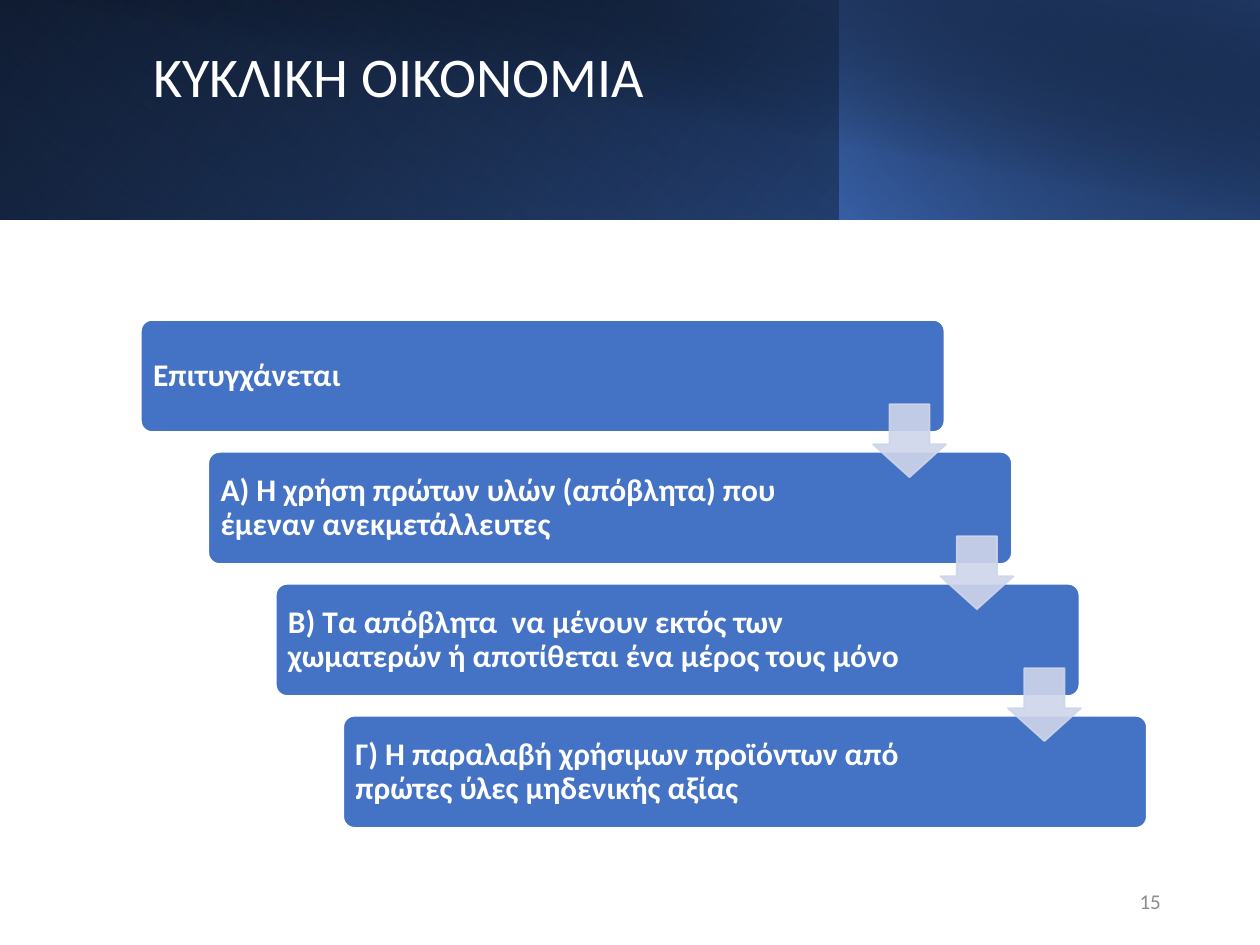
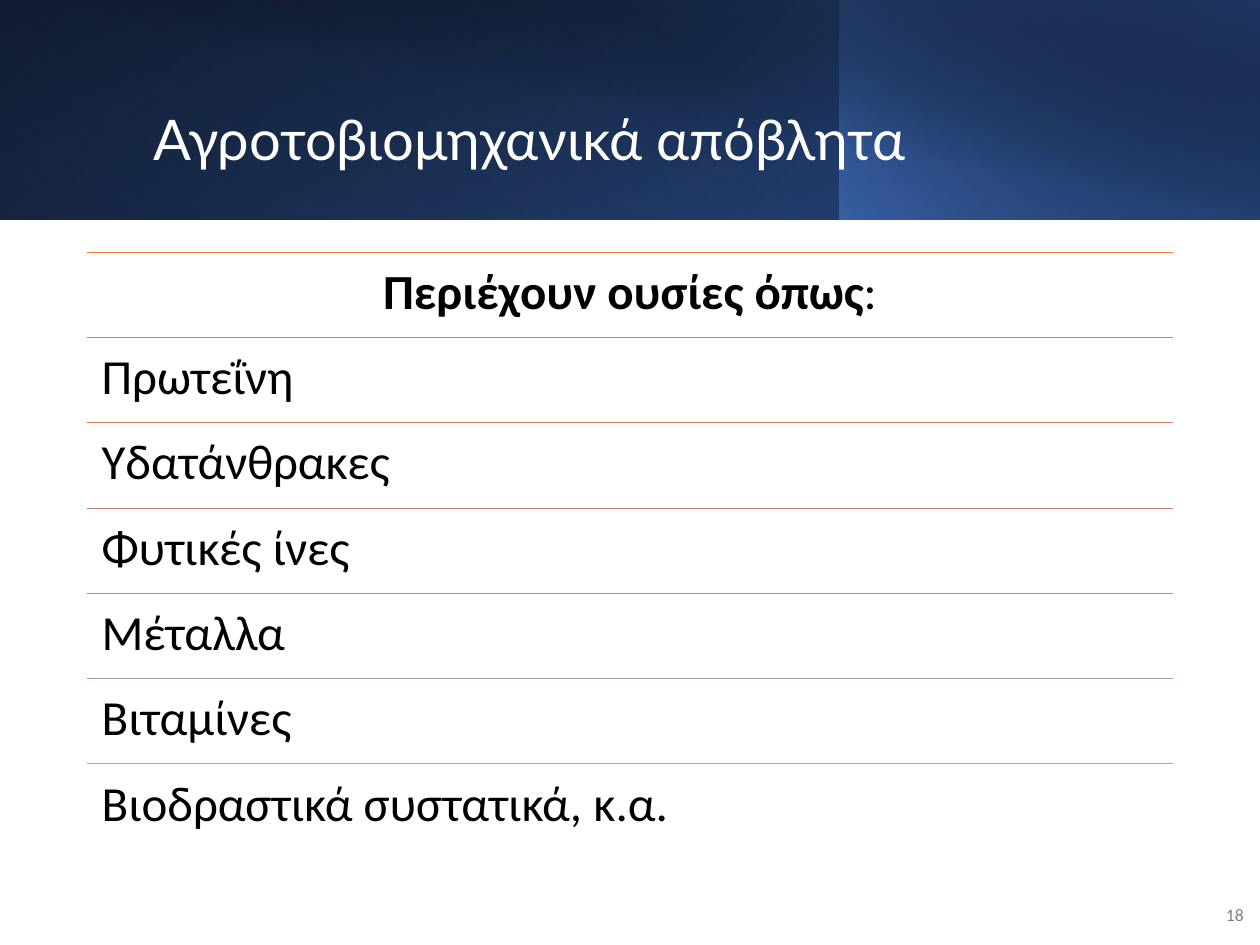
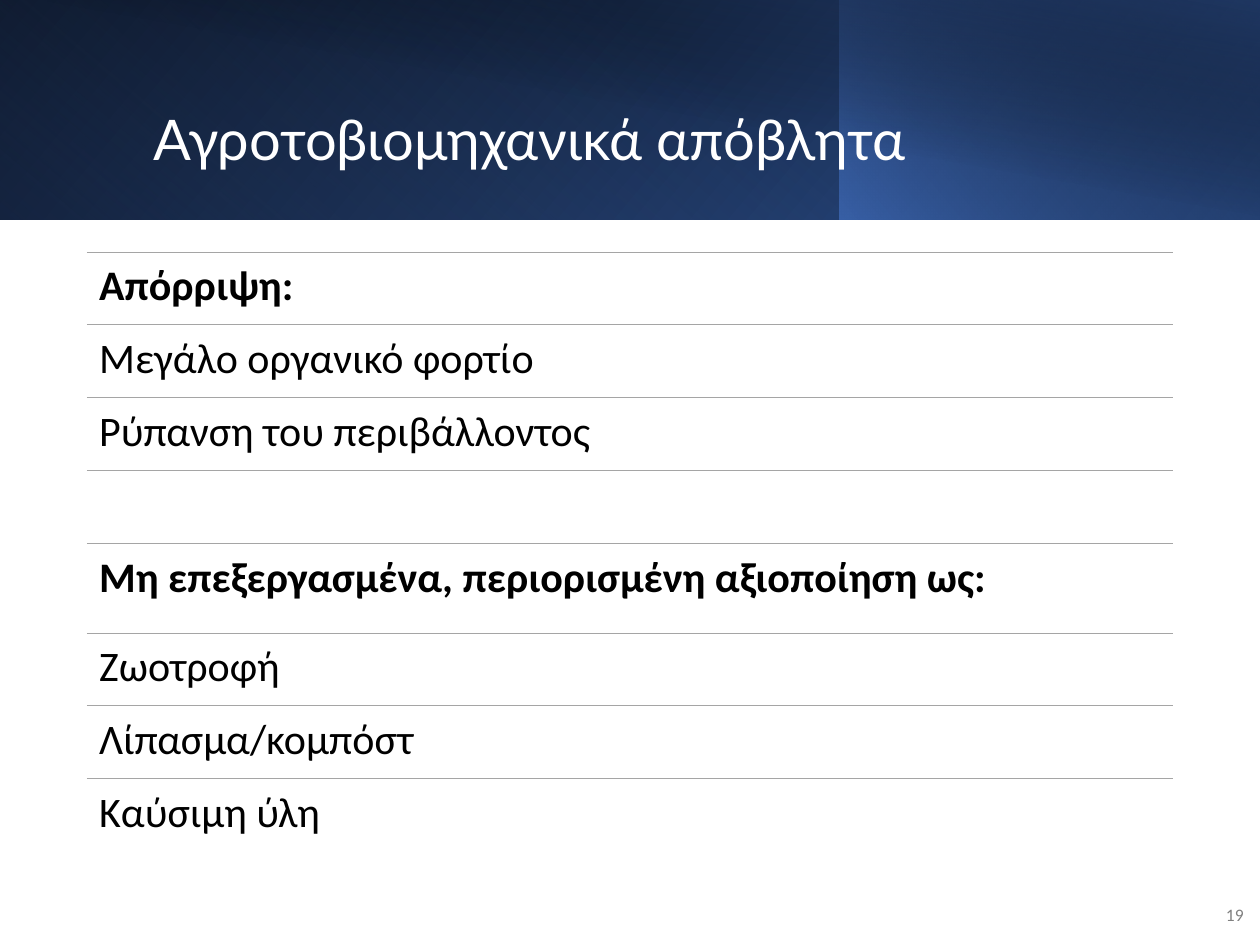
from dataclasses import dataclass

from lxml import etree
from pptx import Presentation
from pptx.dml.color import RGBColor
from pptx.enum import shapes, text
from pptx.oxml import ns
from pptx.util import Cm, Pt

WHITE, BLACK = "FFFFFF", "000000"
BLUE, NAVY, PALE, GREY = "4472C4", "203864", "CFD5EA", "A5A5A5"
BODY_FONT, HEADING_FONT = "Calibri", "Lato"
LEFT, CENTER, RIGHT = text.PP_ALIGN.LEFT, text.PP_ALIGN.CENTER, text.PP_ALIGN.RIGHT
TOP, MIDDLE, BOTTOM = text.MSO_ANCHOR.TOP, text.MSO_ANCHOR.MIDDLE, text.MSO_ANCHOR.BOTTOM


@dataclass(frozen=True)
class Box:
    """Left, top, width and height in centimetres."""
    left: float
    top: float
    width: float
    height: float

    def lengths(self) -> tuple:
        return Cm(self.left), Cm(self.top), Cm(self.width), Cm(self.height)

    def shifted(self, dx: float, dy: float) -> "Box":
        return Box(self.left + dx, self.top + dy, self.width, self.height)


@dataclass(frozen=True)
class Stop:
    position: int
    color: str
    opacity: int = 100


@dataclass(frozen=True)
class BandLayer:
    box: Box
    angle: int
    stops: tuple[Stop, ...]
    flipped: bool = True
    rotation: int = 0


@dataclass(frozen=True)
class Row:
    words: str
    rule_color: str = GREY
    height: float = 1.47
    bold: bool = False
    tail: str = ""
    align: text.PP_ALIGN = LEFT


BAND = (
    BandLayer(Box(0, 0, 25.4, 4.42), 140, (Stop(0, BLACK), Stop(100, "2F5597"))),
    BandLayer(Box(0, 0, 16.92, 4.42), 230, (Stop(20, BLUE, 0), Stop(100, NAVY, 55)),
              rotation=180),
    BandLayer(Box(16.92, 0, 8.48, 4.42), 220, (Stop(0, BLUE, 66), Stop(100, BLACK, 30))),
    BandLayer(Box(0.97, 0, 24.43, 4.44), 280, (Stop(50, BLACK, 0), Stop(99, NAVY, 52)),
              flipped=False),
)
TITLE = Box(2.84, 0.81, 20.62, 2.87)
CORNER_NUMBER = Box(24.38, 17.93, 0.94, 1.02)

STEPS = (
    "Επιτυγχάνεται",
    "Α) Η χρήση πρώτων υλών (απόβλητα) που έμεναν ανεκμετάλλευτες",
    "Β) Τα απόβλητα  να μένουν εκτός των χωματερών ή αποτίθεται ένα μέρος τους μόνο",
    "Γ) Η παραλαβή χρήσιμων προϊόντων από πρώτες ύλες μηδενικής αξίας",
)
FIRST_STEP = Box(2.84, 6.45, 16.2, 2.26)
FIRST_ARROW = Box(17.6, 8.15, 1.47, 1.47)
STEP_RIGHT, STEP_DOWN = 1.36, 2.66

SUBSTANCES = (
    Row("Περιέχουν ουσίες όπως", "ED7D31", 1.72, bold=True, tail=":", align=CENTER),
    Row("Πρωτεΐνη", "DE7A47", 1.72),
    Row("Υδατάνθρακες", "D17B5C", 1.72),
    Row("Φυτικές ίνες", "C48170", 1.72),
    Row("Μέταλλα", "B98A82", 1.72),
    Row("Βιταμίνες", "AE9694", 1.72),
    Row("Βιοδραστικά συστατικά, κ.α.", GREY, 1.72),
)
DISPOSAL = (
    Row("Απόρριψη:", bold=True),
    Row("Μεγάλο οργανικό φορτίο"),
    Row("Ρύπανση του περιβάλλοντος"),
    Row(""),
    Row("Μη επεξεργασμένα, περιορισμένη αξιοποίηση ως:", height=1.8, bold=True),
    Row("Ζωοτροφή"),
    Row("Λίπασμα/κομπόστ"),
    Row("Καύσιμη ύλη"),
)
ROWS_LEFT, ROWS_TOP, ROWS_WIDTH = 1.75, 5.08, 21.9


def rgb(color: str) -> RGBColor:
    return RGBColor.from_string(color)


def set_opacity(fill_parent, percent: int) -> None:
    for color in fill_parent.iter(ns.qn("a:srgbClr")):
        etree.SubElement(color, ns.qn("a:alpha"), val=str(percent * 1000))


def write(shape, words: str, *, size: float, color: str = BLACK, font: str = BODY_FONT,
          bold: bool = False, tail: str = "", align=LEFT, anchor=MIDDLE, spacing: float = 0.9,
          insets: tuple = (0.25, 0.13, 0.25, 0.13)) -> None:
    """Fill a shape with one paragraph; tail follows the words in regular weight."""
    frame = shape.text_frame
    frame.word_wrap = True
    frame.vertical_anchor = anchor
    (frame.margin_left, frame.margin_top,
     frame.margin_right, frame.margin_bottom) = map(Cm, insets)
    paragraph = frame.paragraphs[0]
    paragraph.alignment = align
    paragraph.line_spacing = spacing
    for part, is_bold in ((words, bold), (tail, False)):
        if part:
            run = paragraph.add_run()
            run.text = part
            run.font.name, run.font.size = font, Pt(size)
            run.font.bold = is_bold
            run.font.color.rgb = rgb(color)


def add_text(slide, box: Box, words: str, **style) -> None:
    write(slide.shapes.add_textbox(*box.lengths()), words, **style)


def add_solid(slide, kind, box: Box, fill: str, line: str):
    shape = slide.shapes.add_shape(kind, *box.lengths())
    shape.shadow.inherit = False
    shape.fill.solid()
    shape.fill.fore_color.rgb = rgb(fill)
    shape.line.color.rgb = rgb(line)
    shape.line.width = Pt(1)
    return shape


def add_band_layer(slide, layer: BandLayer) -> None:
    shape = slide.shapes.add_shape(shapes.MSO_SHAPE.RECTANGLE, *layer.box.lengths())
    shape.shadow.inherit = False
    shape.line.fill.background()
    shape.rotation = layer.rotation
    properties = shape.element.spPr
    if layer.flipped:
        properties.find(ns.qn("a:xfrm")).set("flipH", "1")
    gradient = etree.Element(ns.qn("a:gradFill"))
    stop_list = etree.SubElement(gradient, ns.qn("a:gsLst"))
    for stop in layer.stops:
        entry = etree.SubElement(stop_list, ns.qn("a:gs"), pos=str(stop.position * 1000))
        etree.SubElement(entry, ns.qn("a:srgbClr"), val=stop.color)
        if stop.opacity < 100:
            set_opacity(entry, stop.opacity)
    etree.SubElement(gradient, ns.qn("a:lin"), ang=str(layer.angle * 60000), scaled="0")
    properties.find(ns.qn("a:prstGeom")).addnext(gradient)


def add_rule(slide, top: float, color: str) -> None:
    rule = slide.shapes.add_connector(
        shapes.MSO_CONNECTOR.STRAIGHT, Cm(ROWS_LEFT), Cm(top),
        Cm(ROWS_LEFT + ROWS_WIDTH), Cm(top))
    rule.line.color.rgb = rgb(color)
    rule.line.width = Pt(0.5)
    etree.SubElement(rule.element.spPr, ns.qn("a:effectLst"))


def start_slide(deck, title: str, font: str, anchor):
    """Add a blank slide with the header band and its title."""
    slide = deck.slides.add_slide(deck.slide_layouts[6])
    for layer in BAND:
        add_band_layer(slide, layer)
    add_text(slide, TITLE, title, size=32, color=WHITE, font=font, anchor=anchor,
             insets=(0.25, 0.19, 0.25, 0.19))
    return slide


def add_staircase(slide) -> None:
    for index, words in enumerate(STEPS):
        box = FIRST_STEP.shifted(index * STEP_RIGHT, index * STEP_DOWN)
        step = add_solid(slide, shapes.MSO_SHAPE.ROUNDED_RECTANGLE, box, BLUE, WHITE)
        step.adjustments[0] = 0.1
        write(step, words, size=18, color=WHITE, bold=True, insets=(0.18, 0.18, 2.97, 0.18))
    for index in range(len(STEPS) - 1):
        box = FIRST_ARROW.shifted(index * STEP_RIGHT, index * STEP_DOWN)
        arrow = add_solid(slide, shapes.MSO_SHAPE.DOWN_ARROW, box, PALE, PALE)
        arrow.adjustments[0], arrow.adjustments[1] = 0.55, 0.45
        set_opacity(arrow.element.spPr, 90)


def add_rows(slide, rows: tuple[Row, ...], size: float, inset: float) -> None:
    top = ROWS_TOP
    for row in rows:
        add_rule(slide, top, row.rule_color)
        if row.words:
            add_text(slide, Box(ROWS_LEFT, top, ROWS_WIDTH, row.height), row.words,
                     size=size, bold=row.bold, tail=row.tail, align=row.align,
                     anchor=TOP, insets=(inset,) * 4)
        top += row.height


def main() -> None:
    deck = Presentation()
    deck.slide_width, deck.slide_height = Cm(25.4), Cm(19.05)

    economy = start_slide(deck, "ΚΥΚΛΙΚΗ ΟΙΚΟΝΟΜΙΑ", BODY_FONT, TOP)
    add_staircase(economy)
    add_text(economy, Box(17.93, 17.65, 5.72, 1.02), "15", size=12, color="8C8C8C",
             align=RIGHT, spacing=1.0)

    for number, rows, size, inset in (("18", SUBSTANCES, 28, 0.3), ("19", DISPOSAL, 24, 0.25)):
        waste = start_slide(deck, "Αγροτοβιομηχανικά απόβλητα", HEADING_FONT, BOTTOM)
        add_text(waste, CORNER_NUMBER, number, size=10, color="808080", align=RIGHT,
                 spacing=1.0, insets=(0, 0.13, 0.25, 0.13))
        add_rows(waste, rows, size, inset)

    deck.save("out.pptx")


if __name__ == "__main__":
    main()
